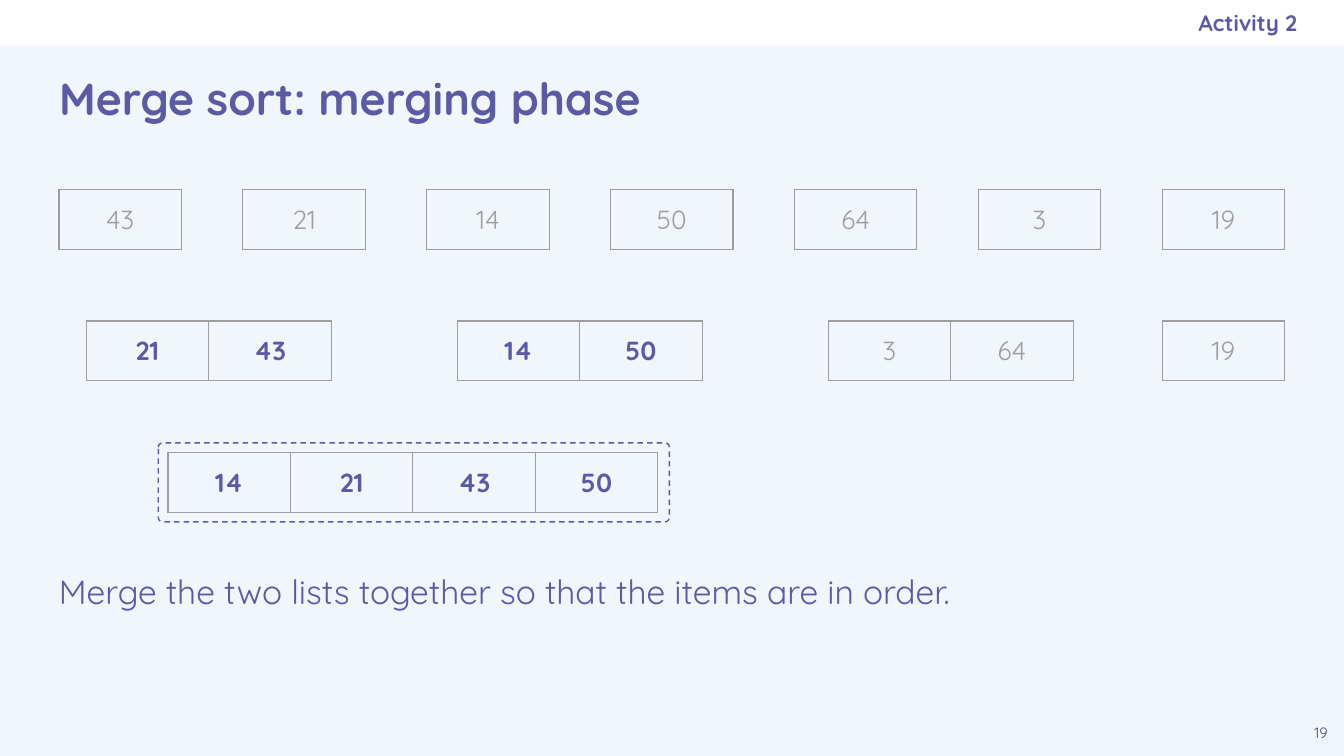
from lxml.etree import SubElement
from pptx import Presentation
from pptx.dml.color import RGBColor
from pptx.enum.dml import MSO_LINE
from pptx.enum.shapes import MSO_SHAPE
from pptx.enum.text import MSO_ANCHOR, MSO_AUTO_SIZE, PP_ALIGN
from pptx.oxml.ns import qn
from pptx.util import Pt

PURPLE = RGBColor(0x5B, 0x5B, 0xA5)
DARK_PURPLE = RGBColor(0x49, 0x49, 0x85)
GREY = RGBColor(0x9E, 0x9E, 0x9E)
WHITE = RGBColor(0xFF, 0xFF, 0xFF)
PALE_BLUE = RGBColor(0xF1, 0xF5, 0xFC)
FONT = "Quicksand"
CELL_W, CELL_H = 65.6, 30.6
LEFT, STEP = 31.6, 98.5
TOP, ROW_STEP = 101.5, 70.5


def write(tf, text, size, color=PURPLE, bold=False, align=PP_ALIGN.LEFT):
    """Write one formatted paragraph into a text frame and return it."""
    p = tf.paragraphs[0]
    p.alignment = align
    p.space_before = Pt(0)
    r = p.add_run()
    r.text = text
    r.font.name = FONT
    r.font.size = Pt(size)
    r.font.bold = bold
    r.font.color.rgb = color
    return p


def add_text(s, text, x, y, w, h, sp=None, anchor=MSO_ANCHOR.TOP,
             right=7.2, wrap=True, **fmt):
    """Place text in a placeholder, or in a new text box."""
    box = [Pt(v) for v in (x, y, w, h)]
    if sp is None:
        sp = s.shapes.add_textbox(*box)
    sp.left, sp.top, sp.width, sp.height = box
    tf = sp.text_frame
    tf.word_wrap = wrap
    tf.auto_size = MSO_AUTO_SIZE.NONE
    tf.vertical_anchor = anchor
    tf.margin_left = tf.margin_top = tf.margin_bottom = Pt(7.2)
    tf.margin_right = Pt(right)
    return write(tf, text, **fmt)


def add_shape(s, kind, x, y, w, h):
    """Add a preset shape without a shadow."""
    sp = s.shapes.add_shape(kind, Pt(x), Pt(y), Pt(w), Pt(h))
    sp.shadow.inherit = False
    return sp


def set_borders(cell, color, width):
    """Draw a solid line on all four sides of a cell."""
    tcPr = cell._tc.get_or_add_tcPr()
    for i, side in enumerate("LRTB"):
        ln = SubElement(tcPr, qn(f"a:ln{side}"), w=str(Pt(width)))
        fill = SubElement(ln, qn("a:solidFill"))
        SubElement(fill, qn("a:srgbClr"), val=str(color))
        tcPr.insert(i, ln)


def add_list(s, values, x, row, active=False):
    """Add a one-row table that holds a list of numbers."""
    n = len(values)
    y = TOP + row * ROW_STEP
    table = s.shapes.add_table(1, n, Pt(x), Pt(y), Pt(n * CELL_W), Pt(CELL_H)).table
    table.first_row = table.horz_banding = False
    for cell, value in zip(table.iter_cells(), values):
        cell.margin_left = cell.margin_right = Pt(7.2)
        cell.margin_top = cell.margin_bottom = Pt(7.2)
        cell.fill.background()
        set_borders(cell, GREY, 0.75)
        write(cell.text_frame, str(value), 14, PURPLE if active else GREY,
              active, PP_ALIGN.CENTER)


def main():
    """Build the merge sort slide."""
    prs = Presentation()
    prs.slide_width, prs.slide_height = Pt(720), Pt(405)
    s = prs.slides.add_slide(prs.slide_layouts[0])
    s.background.fill.solid()
    s.background.fill.fore_color.rgb = PALE_BLUE

    bar = add_shape(s, MSO_SHAPE.RECTANGLE, 0, 0, 720, 24.5)
    bar.fill.solid()
    bar.fill.fore_color.rgb = WHITE
    bar.line.fill.background()
    s.shapes.element.insert(2, bar.element)

    add_text(s, "Merge sort: merging phase", 24.5, 24.5, 671, 55.5,
             sp=s.shapes.title, anchor=MSO_ANCHOR.MIDDLE, size=24, bold=True)
    add_text(s, "Activity 2", 414, 0, 281, 24.5, sp=s.placeholders[1],
             anchor=MSO_ANCHOR.MIDDLE, right=0, size=12, bold=True,
             align=PP_ALIGN.RIGHT)

    frame = add_shape(s, MSO_SHAPE.ROUNDED_RECTANGLE, 84.8, 237.3, 273.8, 42.3)
    frame.adjustments[0] = 0.054
    frame.fill.background()
    frame.line.color.rgb = PURPLE
    frame.line.width = Pt(0.75)
    frame.line.dash_style = MSO_LINE.DASH

    for i, value in enumerate([43, 21, 14, 50, 64, 3, 19]):
        add_list(s, [value], LEFT + i * STEP, 0)
    pairs = [([21, 43], True), ([14, 50], True), ([3, 64], False)]
    for i, (pair, active) in enumerate(pairs):
        add_list(s, pair, 46.2 + i * 198.75, 1, active)
    add_list(s, [19], LEFT + 6 * STEP, 1)
    add_list(s, [14, 21, 43, 50], 90, 2, True)

    p = add_text(s, "Merge the two lists together so that the items are in order.",
                 24.5, 295.5, 671, 101.5, size=18)
    p.line_spacing = 1.15
    p.space_after = Pt(16)
    add_text(s, "19", 695.5, 380.5, 24.5, 24.5, wrap=False, size=8,
             color=DARK_PURPLE, align=PP_ALIGN.CENTER)
    prs.save("out.pptx")


if __name__ == "__main__":
    main()
